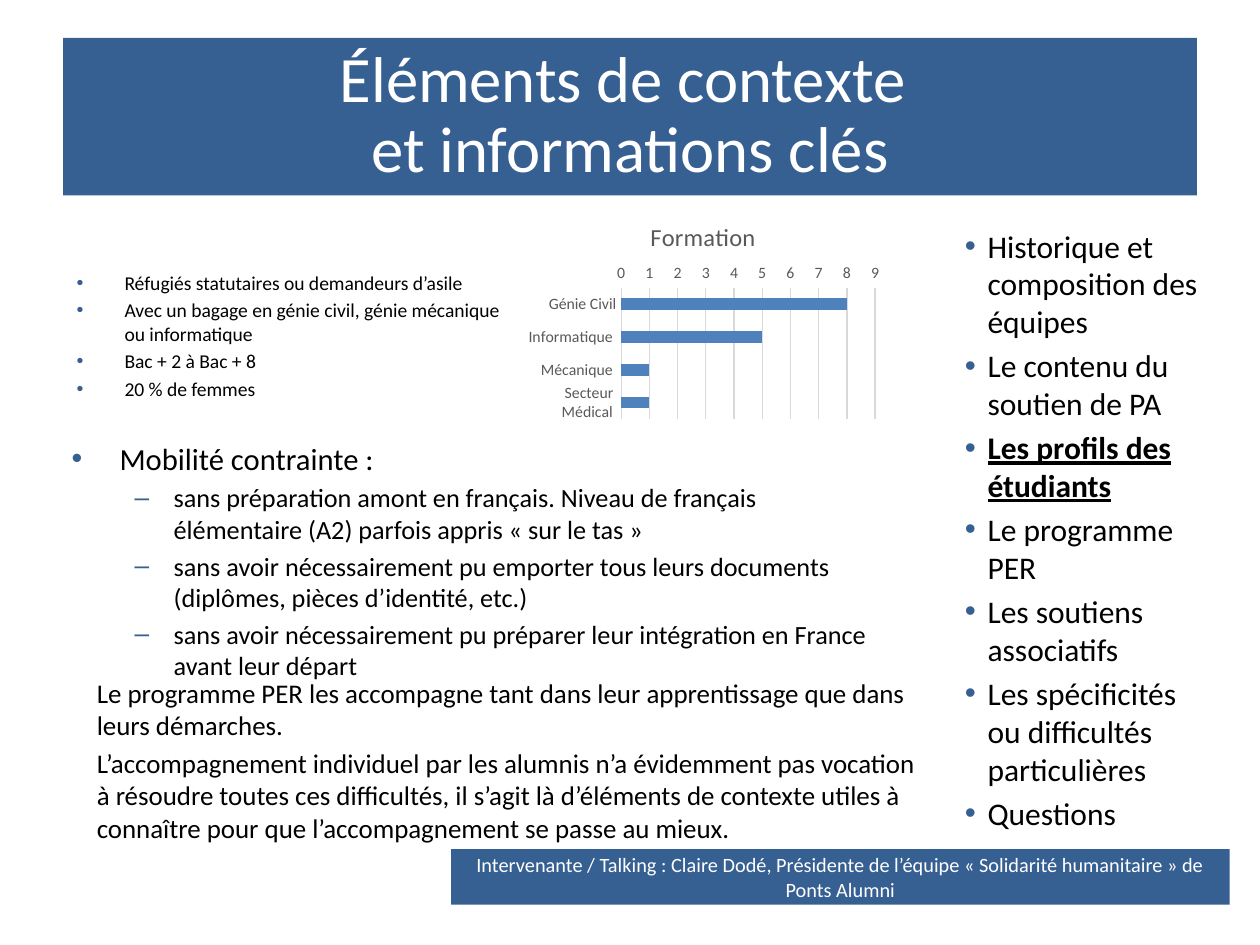
from lxml.etree import SubElement
from pptx import Presentation
from pptx.chart.data import CategoryChartData
from pptx.dml.color import RGBColor
from pptx.enum.chart import XL_CHART_TYPE, XL_TICK_MARK
from pptx.enum.shapes import MSO_SHAPE
from pptx.enum.text import MSO_ANCHOR, MSO_AUTO_SIZE, PP_ALIGN
from pptx.oxml.ns import qn
from pptx.util import Inches, Pt

FONT, BLUE, BLACK, WHITE = "Calibri", "376092", "000000", "FFFFFF"
GREY, GRID, BAR = "595959", "D9D9D9", "4F81BD"

# Content
TITLE = "Éléments de contexte \vet informations clés"
PROFILE = [
    "Réfugiés statutaires ou demandeurs d’asile",
    "Avec un bagage en génie civil, génie mécanique ou informatique",
    "Bac + 2 à Bac + 8",
    "20 % de femmes",
]
AGENDA = [
    "Historique et composition des équipes",
    "Le contenu du soutien de PA",
    "Les profils des étudiants",
    "Le programme PER",
    "Les soutiens associatifs",
    "Les spécificités ou difficultés particulières",
    "Questions",
]
CURRENT = 2
MOVE = "Mobilité contrainte : "
LIMITS = [
    "sans préparation amont en français. Niveau de français élémentaire (A2) "
    "parfois appris « sur le tas »",
    "sans avoir nécessairement pu emporter tous leurs documents "
    "(diplômes, pièces d’identité, etc.)",
    "sans avoir nécessairement pu préparer leur intégration en France "
    "avant leur départ",
]
SUPPORT = [
    "Le programme PER les accompagne tant dans leur apprentissage que dans "
    "leurs démarches.",
    "L’accompagnement individuel par les alumnis n’a évidemment pas vocation à "
    "résoudre toutes ces difficultés, il s’agit là d’éléments de contexte utiles "
    "à connaître pour que l’accompagnement se passe au mieux.",
]
SPEAKER = ("Intervenante / Talking : Claire Dodé, Présidente de l’équipe "
           "« Solidarité humanitaire » de Ponts Alumni")
FIELDS = {"Génie Civil": 8, "Informatique ": 5, "Mécanique ": 1,
          "Secteur Médical ": 1}

# Places: left, top, width, height
SPOTS = {
    "title": (0.5, 0.3, 9, 1.25),
    "profile": (0.51, 2.1, 3.71, 1.21),
    "chart": (4.13, 1.62, 2.9, 1.75),
    "agenda": (7.36, 1.75, 2.36, 4.83),
    "limits": (0.47, 3.44, 6.58, 1.89),
    "support": (0.67, 5.32, 6.69, 1.18),
    "speaker": (3.58, 6.74, 6.18, 0.44),
}
PLOT = {"x": 0.276, "y": 0.38, "w": 0.695, "h": 0.595}


def color(code):
    return RGBColor.from_string(code)


def place(name):
    return [Inches(v) for v in SPOTS[name]]


def style(font, size, code):
    font.name, font.size = FONT, Pt(size)
    font.color.rgb = color(code)


def bullet(para, mark, left, hang):
    props = para._p.get_or_add_pPr()
    props.set("marL", str(Inches(left)))
    props.set("indent", str(-Inches(hang)))
    tint = SubElement(props, qn("a:buClr"))
    SubElement(tint, qn("a:srgbClr"), val=BLUE)
    SubElement(props, qn("a:buFont"), typeface="Arial")
    SubElement(props, qn("a:buChar"), char=mark)


def write(slide, name, items):
    """Each item: text, size, and (mark, left, hang) or None."""
    frame = slide.shapes.add_textbox(*place(name)).text_frame
    frame.word_wrap = True
    for i, (text, size, mark) in enumerate(items):
        para = frame.add_paragraph() if i else frame.paragraphs[0]
        para.text = text
        if mark:
            bullet(para, *mark)
        if i:
            para.space_before = Pt(round(size * 0.2, 2))
        style(para.font, size, BLACK)
    return frame


def banner(shape, text, size):
    shape.fill.solid()
    shape.fill.fore_color.rgb = color(BLUE)
    shape.line.fill.background()
    frame = shape.text_frame
    frame.text = text
    frame.word_wrap = True
    frame.auto_size = MSO_AUTO_SIZE.NONE
    frame.vertical_anchor = MSO_ANCHOR.MIDDLE
    para = frame.paragraphs[0]
    para.alignment = PP_ALIGN.CENTER
    style(para.font, size, WHITE)
    return para


def draw(slide):
    data = CategoryChartData()
    data.categories = list(FIELDS)
    data.add_series("Series 1", list(FIELDS.values()))
    chart = slide.shapes.add_chart(
        XL_CHART_TYPE.BAR_CLUSTERED, *place("chart"), data).chart
    style(chart.font, 10, BLACK)
    chart.has_legend = False
    chart.has_title = True
    head = chart.chart_title.text_frame
    head.text = "Formation"
    style(head.paragraphs[0].font, 14, GREY)
    head.paragraphs[0].font.bold = False

    plot = chart.plots[0]
    plot.gap_width, plot.vary_by_categories = 182, False
    bars = plot.series[0].format.fill
    bars.solid()
    bars.fore_color.rgb = color(BAR)

    cats, vals = chart.category_axis, chart.value_axis
    for axis in (cats, vals):
        axis.major_tick_mark = axis.minor_tick_mark = XL_TICK_MARK.NONE
        style(axis.tick_labels.font, 9, GREY)
    cats.reverse_order = True
    vals.minimum_scale, vals.maximum_scale, vals.major_unit = 0, 9, 1
    vals.has_major_gridlines = True
    vals.format.line.fill.background()
    for line in (cats.format.line, vals.major_gridlines.format.line):
        line.color.rgb, line.width = color(GRID), Pt(0.75)

    # Fixed inner plot area
    area = chart._chartSpace.chart.plotArea
    for old in area.findall(qn("c:layout")):
        area.remove(old)
    layout = SubElement(area, qn("c:layout"))
    area.insert(0, layout)
    box = SubElement(layout, qn("c:manualLayout"))
    SubElement(box, qn("c:layoutTarget"), val="inner")
    for key in "xy":
        SubElement(box, qn(f"c:{key}Mode"), val="edge")
    for key, share in PLOT.items():
        SubElement(box, qn(f"c:{key}"), val=str(share))


def main():
    deck = Presentation()
    deck.slide_width, deck.slide_height = Inches(10), Inches(7.5)
    slide = deck.slides.add_slide(deck.slide_layouts[5])

    # Title band
    title = slide.shapes.title
    title.left, title.top, title.width, title.height = place("title")
    banner(title, TITLE, 37).line_spacing = 0.9

    # Profiles and chart
    dot = ("•", 0.38, 0.38)
    write(slide, "profile", [(t, 11.2, dot) for t in PROFILE])
    draw(slide)

    # Agenda with the current topic marked
    agenda = write(slide, "agenda",
                   [(t, 18, ("•", 0.38, 0.18)) for t in AGENDA])
    now = agenda.paragraphs[CURRENT].font
    now.bold = now.underline = True

    # Constraints and support
    dash = ("–", 0.81, 0.31)
    limits = write(slide, "limits",
                   [(MOVE, 17.5, dot)] + [(t, 15, dash) for t in LIMITS])
    for para in limits.paragraphs[1:]:
        para.level = 1
    write(slide, "support", [(t, 15.4, None) for t in SUPPORT])

    # Speaker band
    band = slide.shapes.add_shape(MSO_SHAPE.RECTANGLE, *place("speaker"))
    band.shadow.inherit = False
    banner(band, SPEAKER, 11.6)

    deck.save("out.pptx")


if __name__ == "__main__":
    main()
